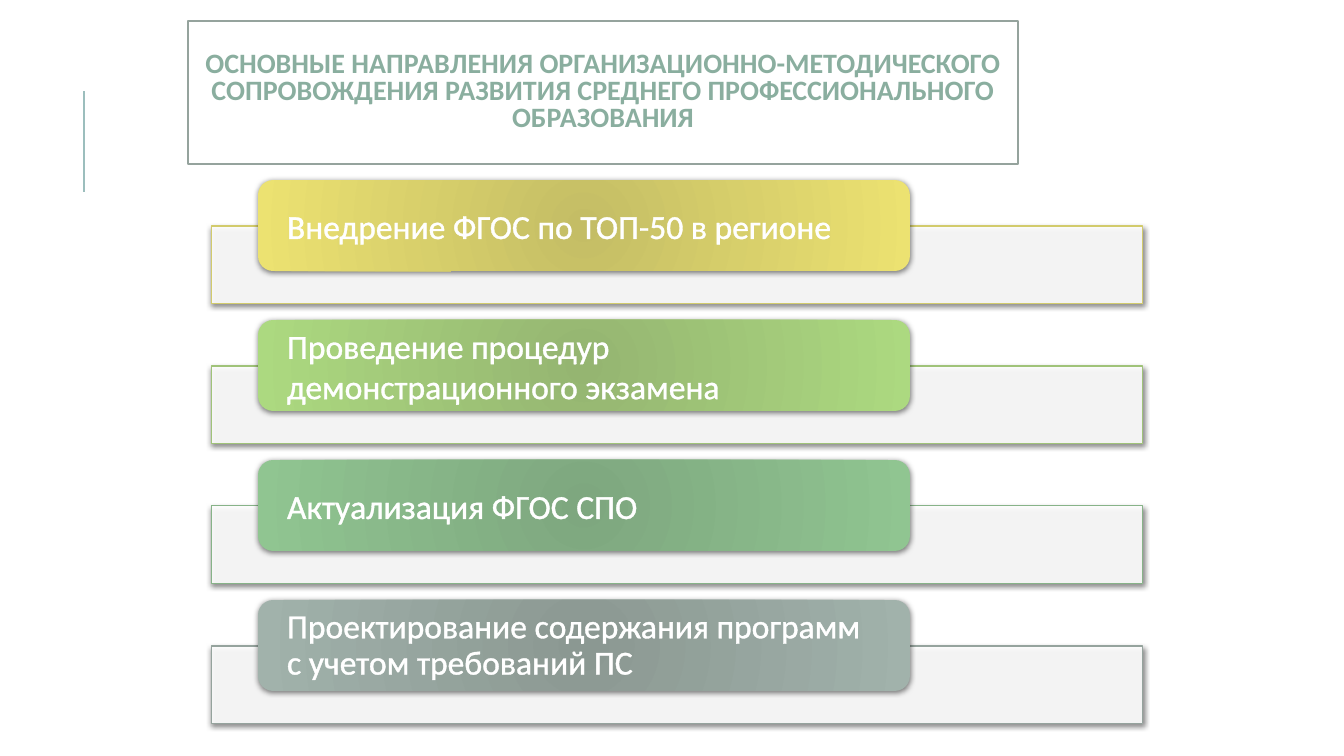
from lxml import etree
from pptx import Presentation
from pptx.dml.color import RGBColor
from pptx.enum.shapes import MSO_CONNECTOR, MSO_SHAPE
from pptx.enum.text import MSO_ANCHOR, PP_ALIGN
from pptx.oxml import parse_xml
from pptx.oxml.ns import nsdecls, qn
from pptx.util import Emu, Pt

PX = 914400 / 100.8
FONT = "Calibri"
COLORS = {
    "white": "FFFFFF",
    "black": "000000",
    "rule": "9CBEBD",
    "title_border": "95A39D",
    "title_outline": "6D7A74",
}
TITLE = (
    "ОСНОВНЫЕ НАПРАВЛЕНИЯ ОРГАНИЗАЦИОННО-МЕТОДИЧЕСКОГО СОПРОВОЖДЕНИЯ "
    "РАЗВИТИЯ СРЕДНЕГО ПРОФЕССИОНАЛЬНОГО ОБРАЗОВАНИЯ"
)
TITLE_STOPS = [(0, "45564F"), (43, "8AAE9F"), (48, "81A294"), (100, "45564F")]
# text, bar border, card centre, card edge, line spacing
DIRECTIONS = [
    ("Внедрение ФГОС по ТОП-50 в регионе", "D2CB6C", "C4BD65", "ECE271", 1.0),
    ("Проведение процедур демонстрационного экзамена", "A0C379", "95B571", "ACD980", 1.0),
    ("Актуализация ФГОС СПО", "87B388", "7EA77F", "90C591", 1.0),
    ("Проектирование содержания программ\vс учетом требований ПС",
     "95A39D", "8B9892", "A1B2AB", 0.9),
]
FIRST_CARD_TOP, ROW_PITCH = 180, 140


def px(length):
    return Emu(round(length * PX))


def gradient_xml(stops, direction):
    stop_list = "".join(
        f'<a:gs pos="{position * 1000}"><a:srgbClr val="{color}"/></a:gs>'
        for position, color in stops
    )
    return parse_xml(
        f'<a:gradFill {nsdecls("a")} rotWithShape="1">'
        f"<a:gsLst>{stop_list}</a:gsLst>{direction}</a:gradFill>"
    )


LINEAR_DOWN = '<a:lin ang="5400000" scaled="0"/>'
RADIAL = (
    '<a:path path="circle">'
    '<a:fillToRect l="100000" t="100000" r="100000" b="100000"/></a:path>'
)


class SlideBuilder:
    def __init__(self, slide):
        self.slide = slide

    def rule(self, x, top, bottom, color, width):
        line = self.slide.shapes.add_connector(
            MSO_CONNECTOR.STRAIGHT, px(x), px(bottom), px(x), px(top)
        )
        line.line.color.rgb = RGBColor.from_string(color)
        line.line.width = Pt(width)
        etree.SubElement(line._element.spPr, qn("a:effectLst"))

    def box(self, preset, left, top, width, height, border=None, border_width=0.75):
        shape = self.slide.shapes.add_shape(
            preset, px(left), px(top), px(width), px(height)
        )
        shape.shadow.inherit = False
        shape.fill.solid()
        shape.fill.fore_color.rgb = RGBColor.from_string(COLORS["white"])
        if border:
            shape.line.color.rgb = RGBColor.from_string(border)
            shape.line.width = Pt(border_width)
        else:
            shape.line.fill.background()
        return shape

    def shadow(self, shape):
        effects = shape._element.spPr.find(qn("a:effectLst"))
        effects.append(parse_xml(
            f'<a:outerShdw {nsdecls("a")} blurRad="{Pt(4)}" dist="{Pt(1)}" '
            f'dir="5400000" rotWithShape="0"><a:srgbClr val="{COLORS["black"]}">'
            '<a:alpha val="50000"/></a:srgbClr></a:outerShdw>'
        ))

    def bar(self, left, top, width, height, border):
        shape = self.box(MSO_SHAPE.RECTANGLE, left, top, width, height, border)
        color = shape._element.spPr.find(qn("a:solidFill")).find(qn("a:srgbClr"))
        etree.SubElement(color, qn("a:alpha"), val="90000")
        self.shadow(shape)

    def card(self, left, top, width, height, centre, edge):
        shape = self.box(MSO_SHAPE.ROUNDED_RECTANGLE, left, top, width, height)
        properties = shape._element.spPr
        properties.replace(
            properties.find(qn("a:solidFill")),
            gradient_xml([(0, centre), (100, edge)], RADIAL),
        )
        self.shadow(shape)

    def set_text(self, shape, text, size, outline, outline_width, side_inset=0,
                 spacing=1.0, align=PP_ALIGN.LEFT, bold=False, stops=None):
        """Set the text of a shape, filled white or with gradient stops."""
        frame = shape.text_frame
        frame.word_wrap = True
        frame.vertical_anchor = MSO_ANCHOR.MIDDLE
        frame.margin_left = frame.margin_right = px(side_inset)
        frame.margin_top = frame.margin_bottom = 0
        paragraph = frame.paragraphs[0]
        paragraph.text = text
        paragraph.alignment = align
        paragraph.line_spacing = spacing
        for run in paragraph.runs:
            run.font.name = FONT
            run.font.size = Pt(size)
            run.font.bold = bold
            run.font.color.rgb = RGBColor.from_string(COLORS["white"])
            properties = run._r.get_or_add_rPr()
            if stops:
                properties.replace(
                    properties.find(qn("a:solidFill")), gradient_xml(stops, LINEAR_DOWN)
                )
            properties.insert(0, parse_xml(
                f'<a:ln {nsdecls("a")} w="{Pt(outline_width)}"><a:solidFill>'
                f'<a:srgbClr val="{outline}"/></a:solidFill></a:ln>'
            ))

    def title(self, text):
        shape = self.box(
            MSO_SHAPE.RECTANGLE, 188, 21, 830, 143, COLORS["title_border"], 1.25
        )
        self.set_text(shape, text, 20, COLORS["title_outline"], 0.71, spacing=0.8,
                      align=PP_ALIGN.CENTER, bold=True, stops=TITLE_STOPS)

    def direction(self, top, text, border, centre, edge, spacing):
        self.bar(212, top + 46, 931, 78, border)
        self.card(258, top, 652, 91, centre, edge)
        label = self.slide.shapes.add_textbox(px(263), px(top + 4), px(643), px(83))
        self.set_text(label, text, 24, COLORS["white"], 1.45, side_inset=24,
                      spacing=spacing)


def main():
    presentation = Presentation()
    presentation.slide_width = px(1344)
    presentation.slide_height = px(756)
    builder = SlideBuilder(presentation.slides.add_slide(presentation.slide_layouts[6]))
    builder.rule(84, 91, 192, COLORS["rule"], 1.5)
    builder.title(TITLE)
    for row, direction in enumerate(DIRECTIONS):
        builder.direction(FIRST_CARD_TOP + row * ROW_PITCH, *direction)
    presentation.save("out.pptx")


if __name__ == "__main__":
    main()
